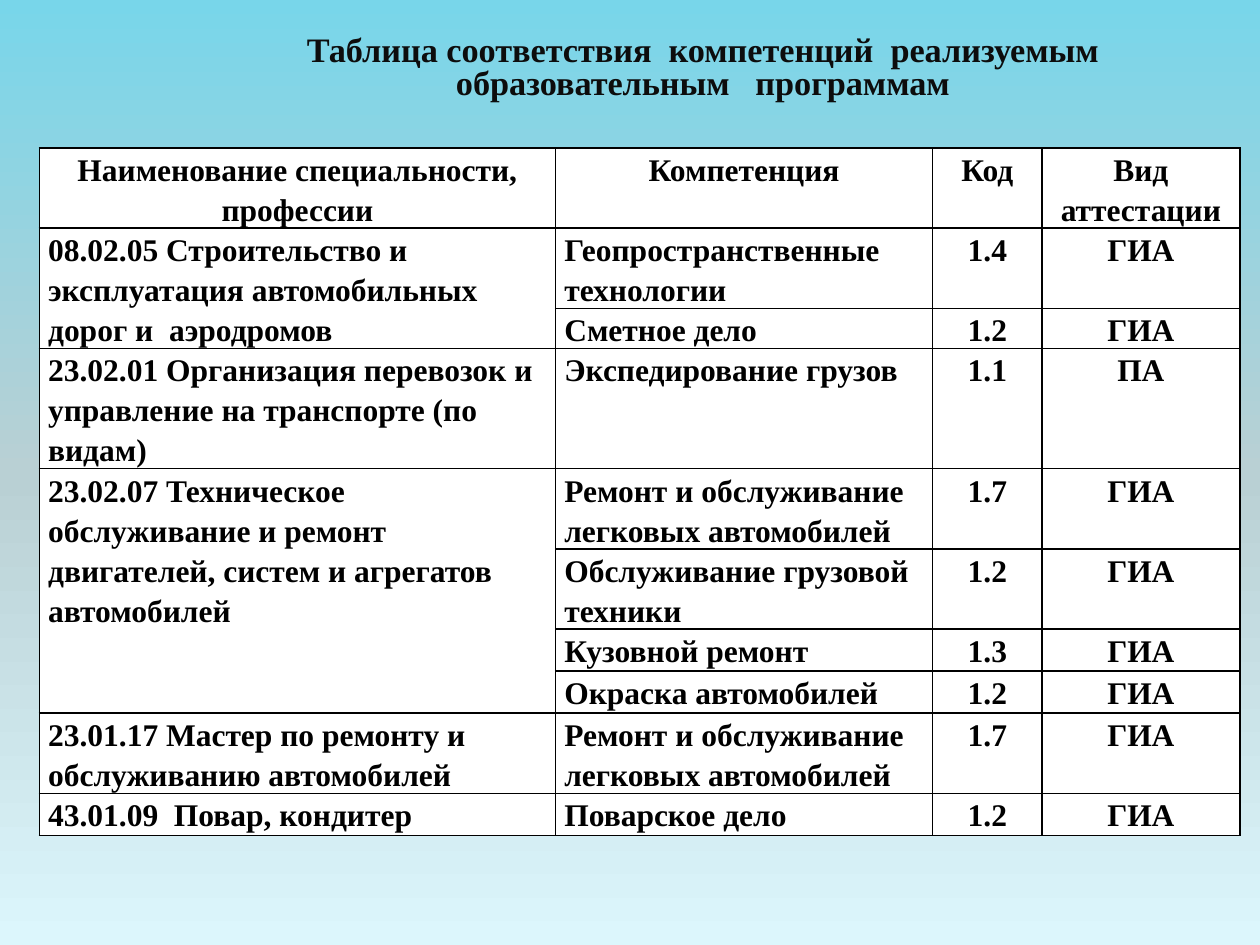
from copy import deepcopy
from dataclasses import dataclass

from lxml.etree import SubElement
from pptx import Presentation
from pptx.dml.color import RGBColor
from pptx.enum.text import MSO_ANCHOR, PP_ALIGN
from pptx.oxml.ns import qn
from pptx.slide import Slide
from pptx.table import Table, _Cell
from pptx.text.text import _Paragraph
from pptx.util import Pt

BLACK = RGBColor(0x00, 0x00, 0x00)
WHITE = RGBColor(0xFF, 0xFF, 0xFF)
TITLE_COLOR = RGBColor(0x0D, 0x0D, 0x0D)
SKY_TOP = RGBColor(0x78, 0xD6, 0xEA)
SKY_MIDDLE = RGBColor(0xB9, 0xD0, 0xD4)
SKY_BOTTOM = RGBColor(0xDC, 0xF6, 0xFC)

FONT = "Times New Roman"
TITLE = "Таблица соответствия  компетенций  реализуемым образовательным   программам"
HEADINGS = ("Наименование специальности, профессии", "Компетенция", "Код", "Вид аттестации")
COLUMN_WIDTHS = (295, 215.5, 62.5, 113)
ROW_HEIGHTS = (45, 39, 17, 67, 30, 32, 24, 24, 29, 24)


@dataclass(frozen=True)
class Competence:
    name: str
    code: str
    attestation: str = "ГИА"


@dataclass(frozen=True)
class Programme:
    """A programme; each line of its title is a paragraph."""
    title: tuple[str, ...]
    competences: tuple[Competence, ...]


CAR_REPAIR = Competence("Ремонт и обслуживание легковых автомобилей", "1.7")
PROGRAMMES = (
    Programme(
        ("08.02.05 Строительство и эксплуатация автомобильных дорог и  аэродромов",),
        (Competence("Геопространственные технологии", "1.4"), Competence("Сметное дело", "1.2")),
    ),
    Programme(
        ("23.02.01 Организация перевозок и управление на транспорте (по видам)",),
        (Competence("Экспедирование грузов", "1.1", "ПА"),),
    ),
    Programme(
        ("23.02.07 Техническое обслуживание и ремонт двигателей, систем и агрегатов",
         "автомобилей"),
        (
            CAR_REPAIR,
            Competence("Обслуживание грузовой техники", "1.2"),
            Competence("Кузовной ремонт", "1.3"),
            Competence("Окраска автомобилей", "1.2"),
        ),
    ),
    Programme(("23.01.17 Мастер по ремонту и обслуживанию автомобилей",), (CAR_REPAIR,)),
    Programme(("43.01.09  Повар, кондитер",), (Competence("Поварское дело", "1.2"),)),
)


def paint_background(page: Slide) -> None:
    fill = page.background.fill
    fill.gradient()
    fill.gradient_angle = 270
    first_stop = fill.gradient_stops[0]._gs
    first_stop.addnext(deepcopy(first_stop))
    colors = (SKY_TOP, SKY_MIDDLE, SKY_BOTTOM)
    for stop, color, position in zip(fill.gradient_stops, colors, (0, 0.5, 1)):
        stop.color.rgb = color
        stop.position = position


def add_bold_run(para: _Paragraph, text: str, size: float, color: RGBColor) -> None:
    span = para.add_run()
    span.text = text
    span.font.name = FONT
    span.font.size = Pt(size)
    span.font.bold = True
    span.font.color.rgb = color


def add_title(page: Slide) -> None:
    box = page.shapes.add_textbox(Pt(106.5), Pt(16.5), Pt(590.5), Pt(46))
    frame = box.text_frame
    frame.word_wrap = True
    frame.vertical_anchor = MSO_ANCHOR.MIDDLE
    para = frame.paragraphs[0]
    para.alignment = PP_ALIGN.CENTER
    para.line_spacing = 0.8
    add_bold_run(para, TITLE, 19.6, TITLE_COLOR)


def style_cell(cell: _Cell) -> None:
    """White cell with thin black borders and no vertical margins."""
    cell.margin_left = cell.margin_right = Pt(5)
    cell.margin_top = cell.margin_bottom = Pt(0)
    properties = cell._tc.get_or_add_tcPr()
    for edge in ("a:lnL", "a:lnR", "a:lnT", "a:lnB"):
        line = SubElement(properties, qn(edge), w=str(Pt(1)))
        line_fill = SubElement(line, qn("a:solidFill"))
        SubElement(line_fill, qn("a:srgbClr"), val=str(BLACK))
    cell.fill.solid()
    cell.fill.fore_color.rgb = WHITE


def write_cell(cell: _Cell, lines: tuple[str, ...], alignment: PP_ALIGN) -> None:
    frame = cell.text_frame
    for index, line in enumerate(lines):
        para = frame.add_paragraph() if index else frame.paragraphs[0]
        para.alignment = alignment
        para.line_spacing = 1.15
        add_bold_run(para, line, 18, BLACK)


def fill_programmes(table: Table) -> None:
    row = 1
    for programme in PROGRAMMES:
        title_cell = table.cell(row, 0)
        last_row = row + len(programme.competences) - 1
        if last_row > row:
            title_cell.merge(table.cell(last_row, 0))
        write_cell(title_cell, programme.title, PP_ALIGN.LEFT)
        for competence in programme.competences:
            write_cell(table.cell(row, 1), (competence.name,), PP_ALIGN.LEFT)
            write_cell(table.cell(row, 2), (competence.code,), PP_ALIGN.CENTER)
            write_cell(table.cell(row, 3), (competence.attestation,), PP_ALIGN.CENTER)
            row += 1


def add_competence_table(page: Slide) -> None:
    frame = page.shapes.add_table(
        len(ROW_HEIGHTS), len(COLUMN_WIDTHS),
        Pt(22.5), Pt(84.5), Pt(sum(COLUMN_WIDTHS)), Pt(sum(ROW_HEIGHTS)),
    )
    table = frame.table
    table.first_row = table.horz_banding = False
    for column, width in zip(table.columns, COLUMN_WIDTHS):
        column.width = Pt(width)
    for row, height in zip(table.rows, ROW_HEIGHTS):
        row.height = Pt(height)
    for cell in table.iter_cells():
        style_cell(cell)
    for column, heading in enumerate(HEADINGS):
        write_cell(table.cell(0, column), (heading,), PP_ALIGN.CENTER)
    fill_programmes(table)


def main() -> None:
    deck = Presentation()
    deck.slide_width, deck.slide_height = Pt(720), Pt(540)
    page = deck.slides.add_slide(deck.slide_layouts[6])
    paint_background(page)
    add_competence_table(page)
    add_title(page)
    deck.save("out.pptx")


if __name__ == "__main__":
    main()
